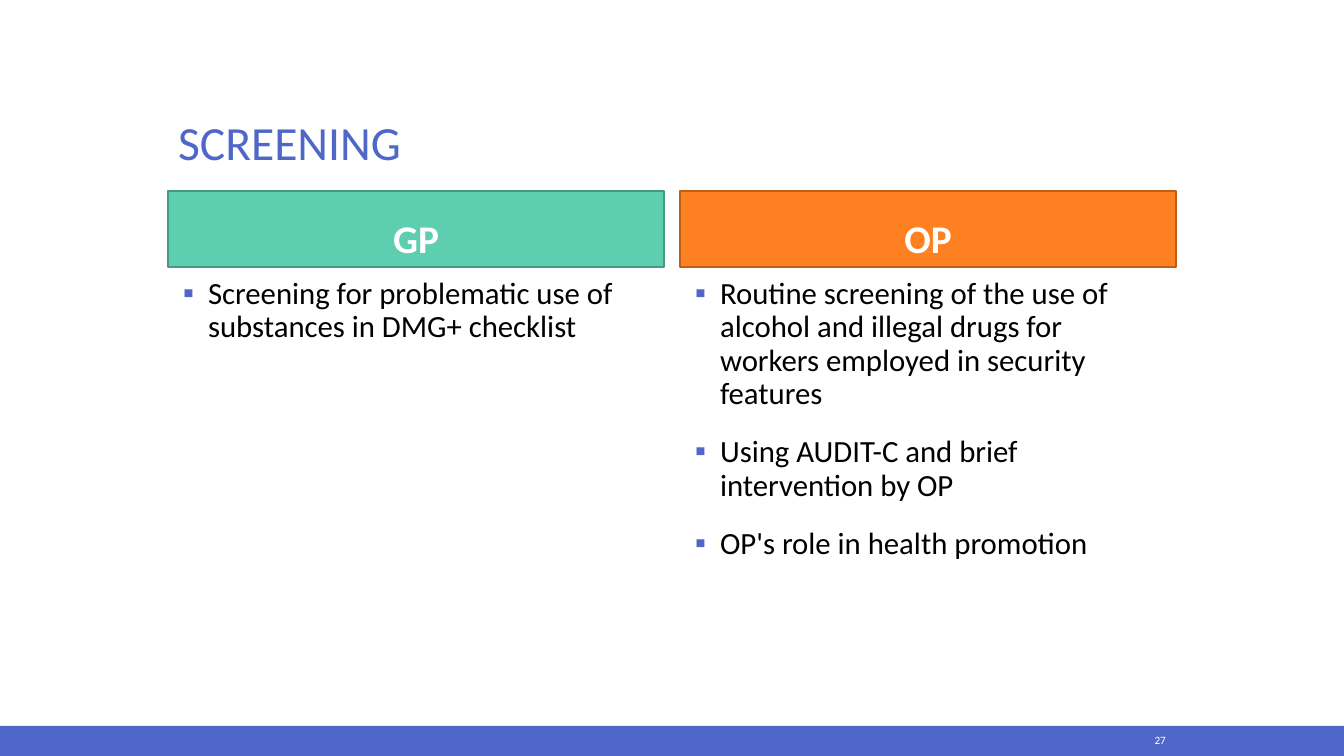
from dataclasses import dataclass

from lxml.etree import SubElement
from pptx import Presentation
from pptx.dml.color import RGBColor
from pptx.enum.shapes import MSO_SHAPE
from pptx.enum.text import MSO_ANCHOR, MSO_AUTO_SIZE, PP_ALIGN
from pptx.oxml.ns import qn
from pptx.shapes.base import BaseShape
from pptx.slide import Slide
from pptx.text.text import TextFrame, _Paragraph
from pptx.util import Emu, Pt


@dataclass(frozen=True)
class Theme:
    font: str = "Calibri"
    accent: str = "4E67C8"
    text: str = "000000"
    light: str = "FFFFFF"
    title_size: int = 34
    header_size: int = 28
    body_size: int = 22
    number_size: int = 8
    line_spacing: float = 0.9
    bullet_spacing: int = 18


@dataclass(frozen=True)
class Box:
    left: int
    top: int
    width: int
    height: int


@dataclass(frozen=True)
class Column:
    header: str
    fill: str
    outline: str
    bullets: tuple[str, ...]


THEME = Theme()
SLIDE_WIDTH, SLIDE_HEIGHT = 1344, 756
MARGIN, COLUMN_WIDTH, COLUMN_GAP = 168, 496, 16
FOOTER_HEIGHT = 30
BULLET_MARGIN, BULLET_INDENT = 30, -25

COLUMNS = (
    Column("GP", "5DCEAF", "459881", (
        "Screening for problematic use of substances in DMG+ checklist",
    )),
    Column("OP", "FF8021", "BD5F18", (
        "Routine screening of the use of alcohol and illegal drugs for "
        "workers employed in security features",
        "Using AUDIT-C and brief intervention by OP",
        "OP's role in health promotion",
    )),
)


def px(length: int) -> Emu:
    return Emu(round(length * 12192000 / SLIDE_WIDTH))


def place(shape: BaseShape, box: Box) -> None:
    shape.left, shape.top = px(box.left), px(box.top)
    shape.width, shape.height = px(box.width), px(box.height)


def prepare_frame(frame: TextFrame, anchor: MSO_ANCHOR) -> None:
    frame.word_wrap = True
    frame.auto_size = MSO_AUTO_SIZE.NONE
    frame.vertical_anchor = anchor


def style_paragraph(paragraph: _Paragraph, size: int, color: str,
                    alignment: PP_ALIGN = PP_ALIGN.LEFT, bold: bool = False) -> None:
    paragraph.alignment = alignment
    paragraph.line_spacing = THEME.line_spacing
    paragraph.space_before = Pt(0)
    paragraph.font.name = THEME.font
    paragraph.font.size = Pt(size)
    paragraph.font.bold = bold
    paragraph.font.color.rgb = RGBColor.from_string(color)


def add_bullet(paragraph: _Paragraph) -> None:
    properties = paragraph._p.get_or_add_pPr()
    properties.set("marL", str(px(BULLET_MARGIN)))
    properties.set("indent", str(px(BULLET_INDENT)))
    bullet_color = SubElement(properties, qn("a:buClr"))
    SubElement(bullet_color, qn("a:srgbClr"), val=THEME.accent)
    SubElement(properties, qn("a:buFont"), typeface=THEME.font)
    SubElement(properties, qn("a:buChar"), char="▪")


def draw_title(slide: Slide) -> None:
    title = slide.shapes.title
    place(title, Box(MARGIN, 50, 2 * COLUMN_WIDTH + COLUMN_GAP, 126))
    title.text_frame.text = "SCREENING"
    prepare_frame(title.text_frame, MSO_ANCHOR.BOTTOM)
    style_paragraph(title.text_frame.paragraphs[0], THEME.title_size, THEME.accent)


def draw_column(slide: Slide, index: int, column: Column) -> None:
    left = MARGIN + index * (COLUMN_WIDTH + COLUMN_GAP)
    header = slide.placeholders[2 * index + 1]
    place(header, Box(left, 191, COLUMN_WIDTH, 76))
    header.fill.solid()
    header.fill.fore_color.rgb = RGBColor.from_string(column.fill)
    header.line.color.rgb = RGBColor.from_string(column.outline)
    header.line.width = Pt(1)
    header.text_frame.text = column.header
    prepare_frame(header.text_frame, MSO_ANCHOR.BOTTOM)
    style_paragraph(header.text_frame.paragraphs[0], THEME.header_size, THEME.light,
                    PP_ALIGN.CENTER, True)

    body = slide.placeholders[2 * index + 2]
    place(body, Box(left, 273, COLUMN_WIDTH, 407))
    body.text_frame.text = "\n".join(column.bullets)
    prepare_frame(body.text_frame, MSO_ANCHOR.TOP)
    for paragraph in body.text_frame.paragraphs:
        add_bullet(paragraph)
        style_paragraph(paragraph, THEME.body_size, THEME.text)
        paragraph.space_before = Pt(THEME.bullet_spacing)


def draw_footer(slide: Slide) -> None:
    top = SLIDE_HEIGHT - FOOTER_HEIGHT
    band = slide.shapes.add_shape(MSO_SHAPE.RECTANGLE, 0, px(top),
                                  px(SLIDE_WIDTH), px(FOOTER_HEIGHT))
    band.shadow.inherit = False
    band.fill.solid()
    band.fill.fore_color.rgb = RGBColor.from_string(THEME.accent)
    band.line.fill.background()

    number = slide.shapes.add_textbox(px(1091), px(728), px(85), px(25))
    number.text_frame.text = "27"
    prepare_frame(number.text_frame, MSO_ANCHOR.MIDDLE)
    paragraph = number.text_frame.paragraphs[0]
    style_paragraph(paragraph, THEME.number_size, THEME.light, PP_ALIGN.RIGHT)
    paragraph.line_spacing = 1.0


def main() -> None:
    presentation = Presentation()
    presentation.slide_width = px(SLIDE_WIDTH)
    presentation.slide_height = px(SLIDE_HEIGHT)
    comparison_layout = presentation.slide_layouts[4]
    slide = presentation.slides.add_slide(comparison_layout)
    draw_title(slide)
    for index, column in enumerate(COLUMNS):
        draw_column(slide, index, column)
    draw_footer(slide)
    presentation.save("out.pptx")


if __name__ == "__main__":
    main()
